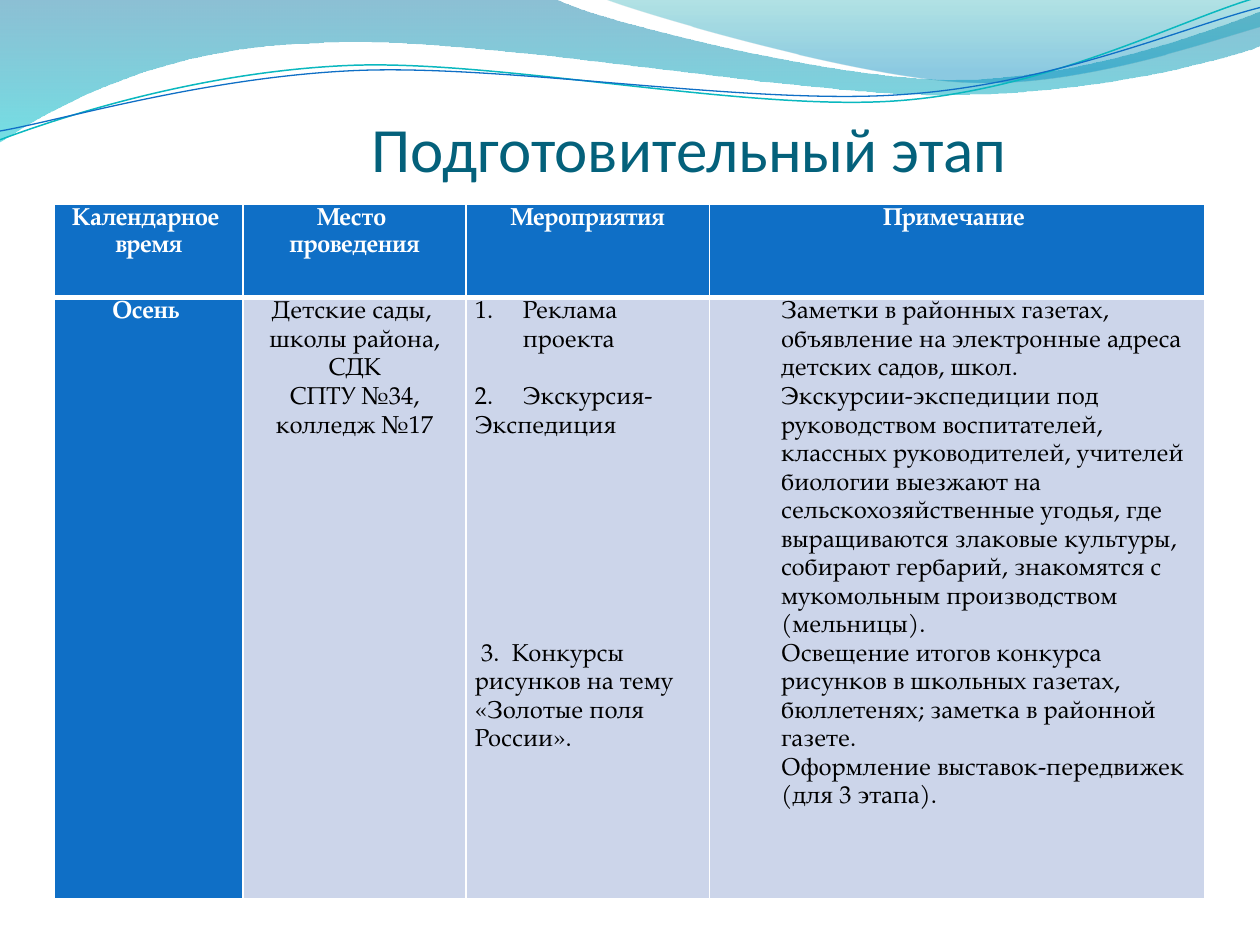
"""Build the slide about the preparatory stage of the project."""
from dataclasses import dataclass

from lxml import etree
from pptx import Presentation
from pptx import util as u
from pptx.dml.color import RGBColor
from pptx.enum import text as t
from pptx.oxml.ns import qn

COLORS = {
    "title": "04617B", "header": "0F6FC6", "body": "CCD5EA",
    "white": "FFFFFF", "black": "000000", "teal": "0AB8BF",
    "wave_top": "0074A1", "wave_bottom": "00C6CF",
    "crest_top": "00A1A9", "crest_bottom": "008BBF",
}
TABLE_FONT = "TeX Gyre Pagella"
LINE_PITCH = 16.3


@dataclass
class Line:
    text: str
    margin: float = 0
    first: float = 0
    lines_before: int = 0
    numbered: bool = False


@dataclass
class Stop:
    color: str
    position: float
    opacity: int


@dataclass
class Wave:
    start: tuple
    segments: list
    stops: tuple = ()
    line: str = ""
    width: float = 0


WAVES = [
    Wave((0, 0), [
        [(4.4, -0.01)],
        [(4.76, 0.17), (6.64, 0.63), (7.58, 0.63)],
        [(8.53, 0.63), (9.58, 0.26), (10, 0.09)],
        [(10.01, 0.36)],
        [(9.83, 0.44), (8.7, 0.76), (7.46, 0.75)],
        [(6.22, 0.75), (3.82, 0.28), (2.57, 0.34)],
        [(1.29, 0.36), (0.46, 0.83), (-0.01, 1.13)],
        [(0, 0)],
    ], stops=(Stop("wave_top", 0, 45), Stop("wave_bottom", 1, 55))),
    Wave((4.79, -0.01), [
        [(5.09, 0.11), (6.82, 0.62), (7.69, 0.65)],
        [(8.56, 0.69), (9.61, 0.32), (10, 0.21)],
        [(10, 0)],
        [(4.79, -0.01)],
    ], stops=(Stop("crest_top", 0, 30), Stop("crest_bottom", 0.8, 45))),
    Wave((0, 1.11), [
        [(0.48, 0.93), (1.58, 0.57), (2.77, 0.52)],
        [(3.95, 0.47), (5.93, 0.89), (7.13, 0.8)],
        [(8.33, 0.71), (9.38, 0.15), (9.98, -0.02)],
    ], line="teal", width=0.85),
    Wave((0, 1.04), [
        [(0.47, 0.96), (1.64, 0.61), (2.83, 0.56)],
        [(4.03, 0.51), (5.97, 0.84), (7.17, 0.75)],
        [(8.36, 0.67), (9.41, 0.21), (10, 0.06)],
    ], line="header", width=0.75),
]

COLUMN_WIDTHS = [1.5, 1.77, 1.93, 3.93]
ROW_HEIGHTS = [0.74, 4.77]
ROWS = [
    [
        [Line("Календарное "), Line("время")],
        [Line("Место "), Line("проведения")],
        [Line("Мероприятия")],
        [Line("Примечание ")],
    ],
    [
        [Line("Осень ")],
        [Line("Детские сады, "), Line("школы района,"), Line("СДК"),
         Line("СПТУ №34,"), Line("колледж №17")],
        [Line("Реклама проекта", 0.38, -0.38, numbered=True),
         Line("Экскурсия-", 0.38, -0.38, lines_before=1, numbered=True),
         Line("Экспедиция"),
         Line("3.  Конкурсы рисунков на тему «Золотые поля России».",
              first=0.05, lines_before=7)],
        [Line("Заметки в районных газетах, объявление на электронные адреса "
              "детских садов, школ.", 0.5),
         Line("Экскурсии-экспедиции под руководством воспитателей, классных "
              "руководителей, учителей биологии выезжают на "
              "сельскохозяйственные угодья, где выращиваются злаковые "
              "культуры, собирают гербарий, знакомятся с мукомольным "
              "производством (мельницы).", 0.5),
         Line("Освещение итогов конкурса рисунков в школьных газетах, "
              "бюллетенях; заметка в районной газете.", 0.5),
         Line("Оформление выставок-передвижек (для 3 этапа).", 0.5)],
    ],
]


def rgb(name: str) -> RGBColor:
    return RGBColor.from_string(COLORS[name])


def bend(shape, segments: list) -> None:
    """Turn each three-point segment of the outline into one cubic curve."""
    edges = iter(list(shape._element.iter(qn("a:lnTo"))))
    for segment in segments:
        first, *others = [next(edges) for _ in segment]
        if others:
            curve = etree.Element(qn("a:cubicBezTo"))
            first.addprevious(curve)
            for edge in (first, *others):
                curve.append(edge[0])
                edge.getparent().remove(edge)


def draw_wave(slide, wave: Wave) -> None:
    """Draw one filled wave or one thin wavy line."""
    builder = slide.shapes.build_freeform(*map(u.Inches, wave.start))
    points = [(u.Inches(x), u.Inches(y)) for segment in wave.segments for x, y in segment]
    builder.add_line_segments(points, close=bool(wave.stops))
    shape = builder.convert_to_shape()
    bend(shape, wave.segments)
    shape.shadow.inherit = False
    if not wave.stops:
        shape.fill.background()
        shape.line.color.rgb = rgb(wave.line)
        shape.line.width = u.Pt(wave.width)
        return
    shape.line.fill.background()
    shape.fill.gradient()
    shape.fill.gradient_angle = 270
    for gradient_stop, stop in zip(shape.fill.gradient_stops, wave.stops):
        gradient_stop.color.rgb = rgb(stop.color)
        gradient_stop.position = stop.position
    for color, stop in zip(shape._element.spPr.iter(qn("a:srgbClr")), wave.stops):
        etree.SubElement(color, qn("a:alpha"), val=str(stop.opacity * 1000))


def write(frame, lines: list, *, font: str, size: float, color: str, bold: bool = False,
          align=t.PP_ALIGN.LEFT, spacing: float = 1.0) -> None:
    """Fill a text frame with formatted paragraphs."""
    for index, line in enumerate(lines):
        paragraph = frame.add_paragraph() if index else frame.paragraphs[0]
        properties = paragraph._p.get_or_add_pPr()
        properties.set("marL", str(u.Inches(line.margin)))
        properties.set("indent", str(u.Inches(line.first)))
        if line.numbered:
            etree.SubElement(properties, qn("a:buAutoNum"), type="arabicPeriod")
        paragraph.alignment = align
        paragraph.line_spacing = spacing
        if line.lines_before:
            paragraph.space_before = u.Pt(line.lines_before * LINE_PITCH)
        run = paragraph.add_run()
        run.text = line.text
        run.font.name, run.font.size, run.font.bold = font, u.Pt(size), bold
        run.font.color.rgb = rgb(color)


def set_border(cell, side: str, width: float) -> None:
    border = etree.SubElement(cell._tc.get_or_add_tcPr(), qn(f"a:ln{side}"), w=str(u.Pt(width)))
    fill = etree.SubElement(border, qn("a:solidFill"))
    etree.SubElement(fill, qn("a:srgbClr"), val=COLORS["white"])


def draw_table(slide) -> None:
    """Draw the schedule with its header row and header column."""
    table = slide.shapes.add_table(
        len(ROWS), len(COLUMN_WIDTHS), u.Inches(0.43), u.Inches(1.62),
        u.Inches(sum(COLUMN_WIDTHS)), u.Inches(sum(ROW_HEIGHTS))).table
    for column, width in zip(table.columns, COLUMN_WIDTHS):
        column.width = u.Inches(width)
    for row, height in zip(table.rows, ROW_HEIGHTS):
        row.height = u.Inches(height)
    for r, row in enumerate(ROWS):
        for c, lines in enumerate(row):
            cell = table.cell(r, c)
            heading = r == 0 or c == 0
            cell.margin_left = cell.margin_right = u.Inches(0.07)
            cell.margin_top = cell.margin_bottom = 0
            for side in "LRTB":
                under_header = (r, side) in ((0, "B"), (1, "T"))
                set_border(cell, side, 3 if under_header else 1)
            cell.fill.solid()
            cell.fill.fore_color.rgb = rgb("header" if heading else "body")
            write(cell.text_frame, lines, font=TABLE_FONT, size=14,
                  color="white" if heading else "black", bold=heading, spacing=1.15,
                  align=t.PP_ALIGN.CENTER if heading or c == 1 else t.PP_ALIGN.LEFT)


def draw_title(slide) -> None:
    """Place and format the title."""
    title = slide.shapes.title
    title.left, title.top, title.width, title.height = map(u.Inches, (2.87, 0.77, 5.2, 0.7))
    frame = title.text_frame
    frame.auto_size = t.MSO_AUTO_SIZE.NONE
    frame.vertical_anchor = t.MSO_ANCHOR.BOTTOM
    frame.margin_left = frame.margin_right = frame.margin_bottom = 0
    frame.margin_top = u.Inches(0.05)
    write(frame, [Line("Подготовительный этап")], font="Calibri", size=36,
          color="title", align=t.PP_ALIGN.CENTER)


def main() -> None:
    deck = Presentation()
    deck.slide_width, deck.slide_height = u.Inches(10), u.Inches(7.5)
    slide = deck.slides.add_slide(deck.slide_layouts[5])
    for wave in WAVES:
        draw_wave(slide, wave)
    draw_title(slide)
    draw_table(slide)
    deck.save("out.pptx")


if __name__ == "__main__":
    main()
